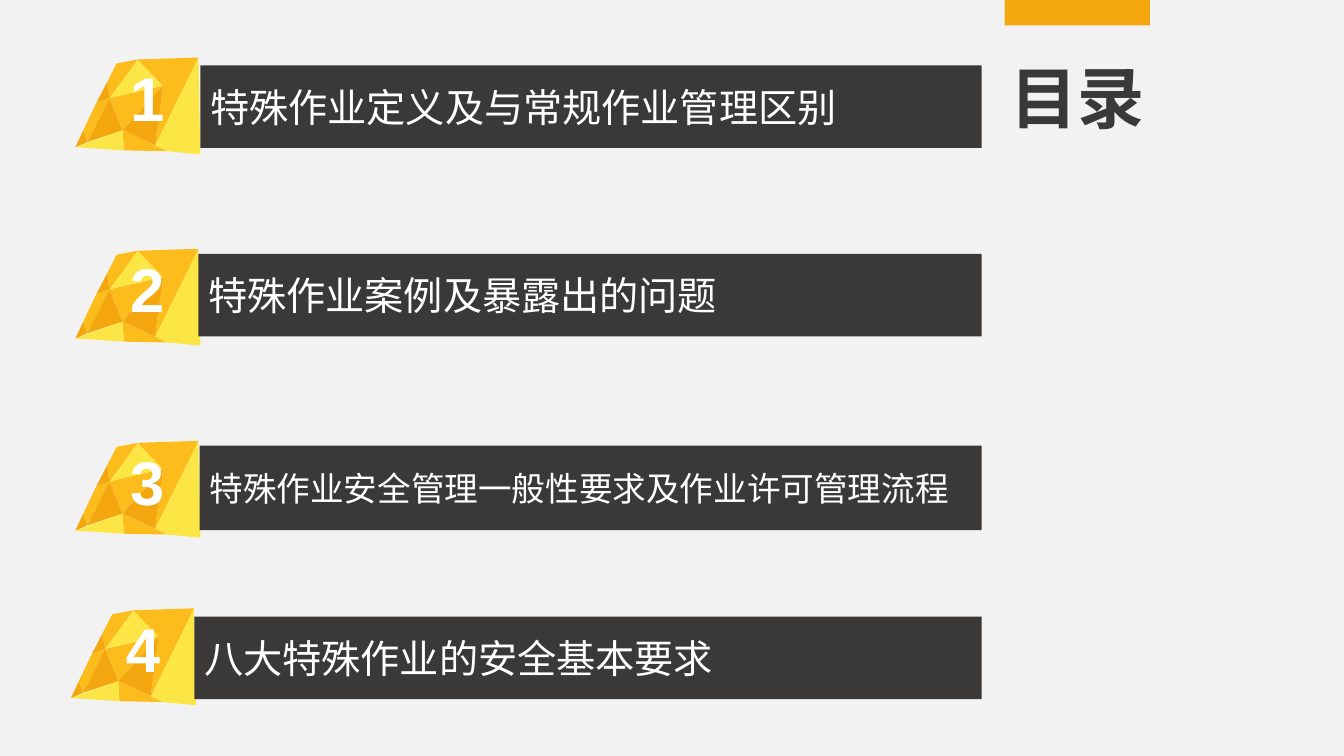
"""Build the contents slide: four numbered topics with faceted gem markers."""
from typing import NamedTuple

from lxml.etree import SubElement
from pptx import Presentation
from pptx.dml.color import RGBColor
from pptx.enum.shapes import MSO_SHAPE as Shape
from pptx.enum.text import MSO_ANCHOR as Anchor, PP_ALIGN as Align
from pptx.oxml.ns import qn
from pptx.util import Cm, Pt

DARK, WHITE, BACKDROP = "3B3838", "FFFFFF", "F2F2F2"
LEMON, AMBER, ORANGE = "FCE646", "FCBC1C", "F3A60D"
LATIN, CHINESE = "Arial", "Noto Sans CJK SC"
BAR_RIGHT = 24.74

CORNERS = {
    "A": (3.15, 2.44), "B": (3.10, 0), "C": (2.01, 2.21), "D": (2.31, 2.36),
    "E": (1.19, 1.83), "F": (1.22, 2.34), "G": (0, 2.26), "H": (2.21, 0.71),
    "I": (0.30, 2.13), "J": (0.86, 1.02), "K": (0.20, 1.83), "L": (0.53, 1.14),
    "M": (1.57, 0.05), "N": (1.04, 0.15), "O": (0.79, 0.64),
}


class Facet(NamedTuple):
    corners: str
    color: str


class Topic(NamedTuple):
    number: str
    title: str
    size: int
    gem_left: float
    gem_top: float
    bar_left: float
    bar_top: float
    bar_height: float


FACETS = [
    Facet("ABCD", LEMON), Facet("DEF", AMBER), Facet("FEG", LEMON),
    Facet("CHB", AMBER), Facet("CHE", ORANGE), Facet("IJE", ORANGE),
    Facet("IKG", ORANGE), Facet("IJLK", AMBER), Facet("HJE", AMBER),
    Facet("HMJ", LEMON), Facet("BHM", AMBER), Facet("MNOJ", AMBER),
    Facet("JOL", ORANGE),
]

TOPICS = [
    Topic("1", "特殊作业定义及与常规作业管理区别", 28, 1.9, 1.45, 5.05, 1.65, 2.08),
    Topic("2", "特殊作业案例及暴露出的问题", 28, 1.9, 6.27, 5.0, 6.4, 2.08),
    Topic("3", "特殊作业安全管理一般性要求及作业许可管理流程", 24, 1.9, 11.11, 5.03, 11.23, 2.13),
    Topic("4", "八大特殊作业的安全基本要求", 28, 1.79, 15.33, 4.9, 15.54, 2.08),
]


def rgb(color: str) -> RGBColor:
    """Turn a hex string into a colour."""
    return RGBColor.from_string(color)


def paint(shape, color: str) -> None:
    """Give a shape a flat fill without outline or shadow."""
    shape.fill.solid()
    shape.fill.fore_color.rgb = rgb(color)
    shape.line.fill.background()
    shape.shadow.inherit = False


def write(shape, text: str, size: int, color: str, font: str,
          bold: bool, align: Align, anchor: Anchor) -> None:
    """Put one formatted line of text in a shape."""
    frame = shape.text_frame
    frame.word_wrap = True
    frame.vertical_anchor = anchor
    paragraph = frame.paragraphs[0]
    paragraph.text = text
    paragraph.alignment = align
    run = paragraph.runs[0]
    run.font.name = font
    run.font.size = Pt(size)
    run.font.bold = bold
    run.font.color.rgb = rgb(color)
    SubElement(run.font._element, qn("a:ea")).set("typeface", CHINESE)


def add_block(slide, left: float, top: float, width: float, height: float, color: str):
    """Add a flat rectangle measured in centimetres."""
    block = slide.shapes.add_shape(Shape.RECTANGLE, Cm(left), Cm(top), Cm(width), Cm(height))
    paint(block, color)
    return block


def add_gem(slide, left: float, top: float) -> None:
    """Add the group of facets that forms one gem."""
    gem = slide.shapes.add_group_shape()
    for facet in FACETS:
        outline = [(Cm(left + CORNERS[c][0]), Cm(top + CORNERS[c][1])) for c in facet.corners]
        builder = gem.shapes.build_freeform(*outline[0])
        builder.add_line_segments(outline[1:], close=True)
        paint(builder.convert_to_shape(), facet.color)


def add_topic(slide, topic: Topic) -> None:
    """Add a gem, its bar with the title, and its number."""
    add_gem(slide, topic.gem_left, topic.gem_top)
    bar = add_block(slide, topic.bar_left, topic.bar_top,
                    BAR_RIGHT - topic.bar_left, topic.bar_height, DARK)
    write(bar, topic.title, topic.size, WHITE, CHINESE, False, Align.LEFT, Anchor.MIDDLE)
    number = slide.shapes.add_textbox(Cm(topic.gem_left + 0.48), Cm(topic.gem_top - 0.06),
                                      Cm(2.67), Cm(2.59))
    write(number, topic.number, 44, WHITE, LATIN, True, Align.CENTER, Anchor.TOP)


def main() -> None:
    """Create and save the presentation."""
    deck = Presentation()
    deck.slide_width, deck.slide_height = Cm(33.87), Cm(19.05)
    slide = deck.slides.add_slide(deck.slide_layouts[6])
    slide.background.fill.solid()
    slide.background.fill.fore_color.rgb = rgb(BACKDROP)

    heading = slide.shapes.add_textbox(Cm(22.78), Cm(1.22), Cm(8.74), Cm(2.44))
    write(heading, "目录", 48, DARK, LATIN, True, Align.CENTER, Anchor.MIDDLE)
    add_block(slide, 25.32, 0, 3.66, 0.64, ORANGE)
    for topic in TOPICS:
        add_topic(slide, topic)
    deck.save("out.pptx")


if __name__ == "__main__":
    main()
